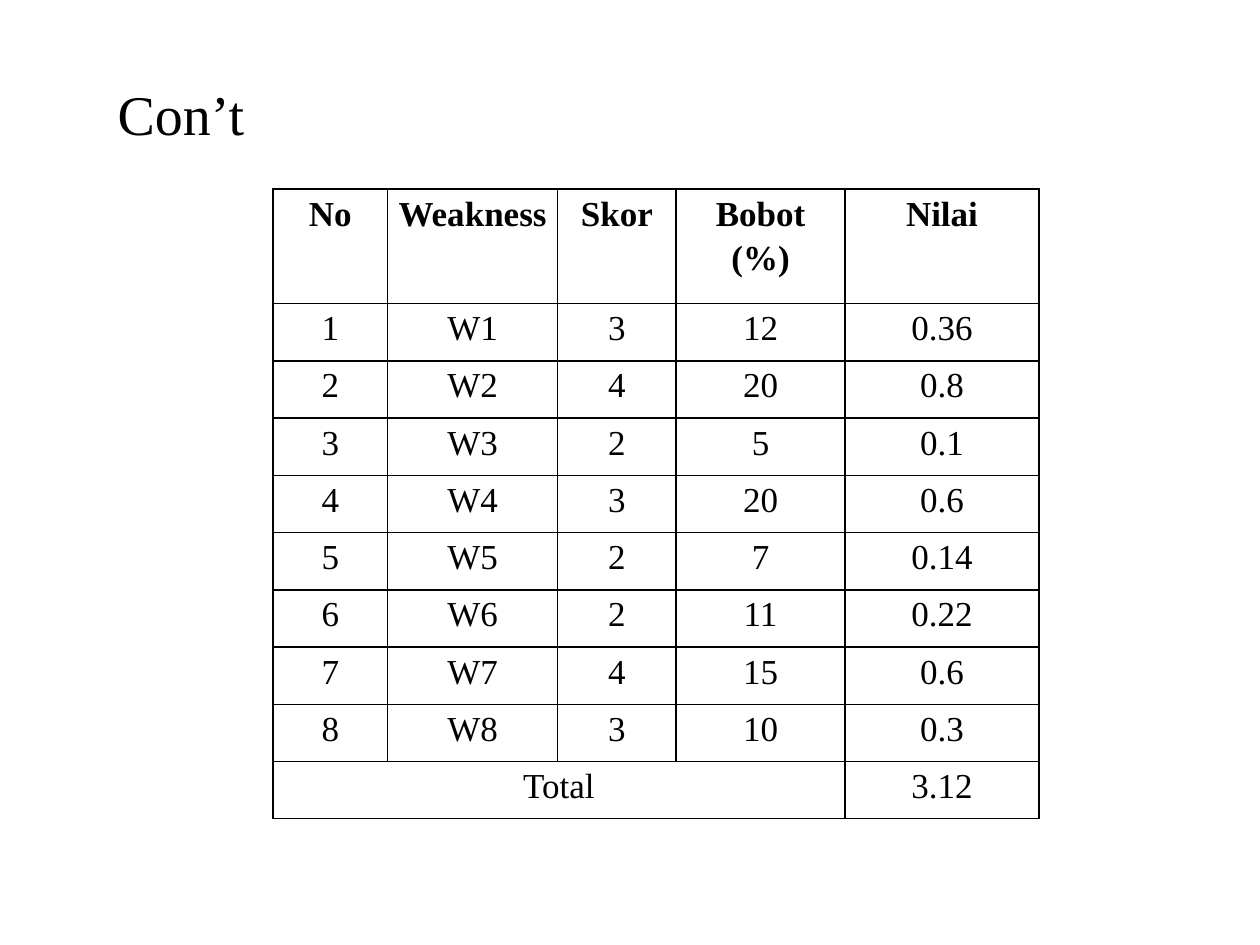
from dataclasses import dataclass

from lxml import etree
from pptx import Presentation
from pptx.dml.color import RGBColor
from pptx.enum.text import MSO_ANCHOR, MSO_AUTO_SIZE, PP_ALIGN
from pptx.oxml.ns import qn
from pptx.util import Pt

CENTER, LEFT = PP_ALIGN.CENTER, PP_ALIGN.LEFT
TOP = MSO_ANCHOR.TOP
GROW = MSO_AUTO_SIZE.SHAPE_TO_FIT_TEXT
TITLE_ONLY = 5


@dataclass(frozen=True)
class Theme:
    """Colours, type sizes and line widths of the slide."""
    font: str = "Times New Roman"
    ink: str = "000000"
    title_size: int = 32
    table_size: int = 20
    line_spacing: float = 1.15
    border: int = 1


THEME = Theme()
HEADINGS = ["No", "Weakness", "Skor", "Bobot (%)", "Nilai"]
SCORES_AND_WEIGHTS = [(3, 12), (4, 20), (2, 5), (3, 20), (2, 7), (2, 11), (4, 15), (3, 10)]
COLUMN_WIDTHS = [65.5, 97.2, 67.7, 96.5, 110.9]
TABLE_LEFT, TABLE_TOP, TABLE_HEIGHT = 156, 108, 360


def apply_format(target, values):
    """Set each named attribute on the target."""
    for name, value in values.items():
        setattr(target, name, value)


def format_font(font, size, bold=False):
    """Give a font the theme's face and colour."""
    apply_format(font, {"name": THEME.font, "size": Pt(size), "bold": bold})
    font.color.rgb = RGBColor.from_string(THEME.ink)


def add_title(slide, text):
    """Place the title in its placeholder."""
    title = slide.shapes.title
    apply_format(title, {"left": Pt(60), "top": Pt(42), "width": Pt(174), "height": Pt(46)})
    frame = title.text_frame
    frame.text = text
    apply_format(frame, {"word_wrap": True, "auto_size": GROW, "vertical_anchor": TOP})
    heading = frame.paragraphs[0]
    heading.alignment = LEFT
    format_font(heading.runs[0].font, THEME.title_size)


def add_borders(cell):
    """Draw a thin line on all four sides of a cell."""
    properties = cell._tc.get_or_add_tcPr()
    for side in ("lnL", "lnR", "lnT", "lnB"):
        line = etree.SubElement(properties, qn(f"a:{side}"), w=str(Pt(THEME.border)))
        fill = etree.SubElement(line, qn("a:solidFill"))
        etree.SubElement(fill, qn("a:srgbClr"), val=THEME.ink)


def fill_cell(cell, text, bold):
    """Write and format one table cell."""
    add_borders(cell)
    cell.fill.background()
    apply_format(cell, {
        "margin_left": Pt(5), "margin_right": Pt(5),
        "margin_top": 0, "margin_bottom": 0, "vertical_anchor": TOP,
    })
    cell.text = text
    entry = cell.text_frame.paragraphs[0]
    apply_format(entry, {"alignment": CENTER, "line_spacing": THEME.line_spacing})
    format_font(entry.font, THEME.table_size, bold)
    for run in entry.runs:
        format_font(run.font, THEME.table_size, bold)


def weakness_rows():
    """Return the headings, the weighted scores and their total."""
    rows = [HEADINGS]
    for number, (score, weight) in enumerate(SCORES_AND_WEIGHTS, 1):
        value = f"{score * weight / 100:g}"
        rows.append([str(number), f"W{number}", str(score), str(weight), value])
    total = sum(score * weight for score, weight in SCORES_AND_WEIGHTS) / 100
    return rows + [["Total", "", "", "", f"{total:g}"]]


def add_score_table(slide, rows):
    """Build the table with a double-height header and a merged total row."""
    table = slide.shapes.add_table(
        len(rows), len(HEADINGS), Pt(TABLE_LEFT), Pt(TABLE_TOP),
        Pt(sum(COLUMN_WIDTHS)), Pt(TABLE_HEIGHT)).table
    apply_format(table, {"first_row": False, "horz_banding": False})
    for column, width in zip(table.columns, COLUMN_WIDTHS):
        column.width = Pt(width)
    row_height = TABLE_HEIGHT / (len(rows) + 1)
    for index, (row, texts) in enumerate(zip(table.rows, rows)):
        is_header = index == 0
        row.height = Pt(row_height * (2 if is_header else 1))
        for cell, text in zip(row.cells, texts):
            fill_cell(cell, text, is_header)
    last = len(rows) - 1
    table.cell(last, 0).merge(table.cell(last, 3))


def main():
    """Build and save the slide."""
    deck = Presentation()
    apply_format(deck, {"slide_width": Pt(720), "slide_height": Pt(540)})
    slide = deck.slides.add_slide(deck.slide_layouts[TITLE_ONLY])
    add_score_table(slide, weakness_rows())
    add_title(slide, "Con’t")
    deck.save("out.pptx")


if __name__ == "__main__":
    main()
